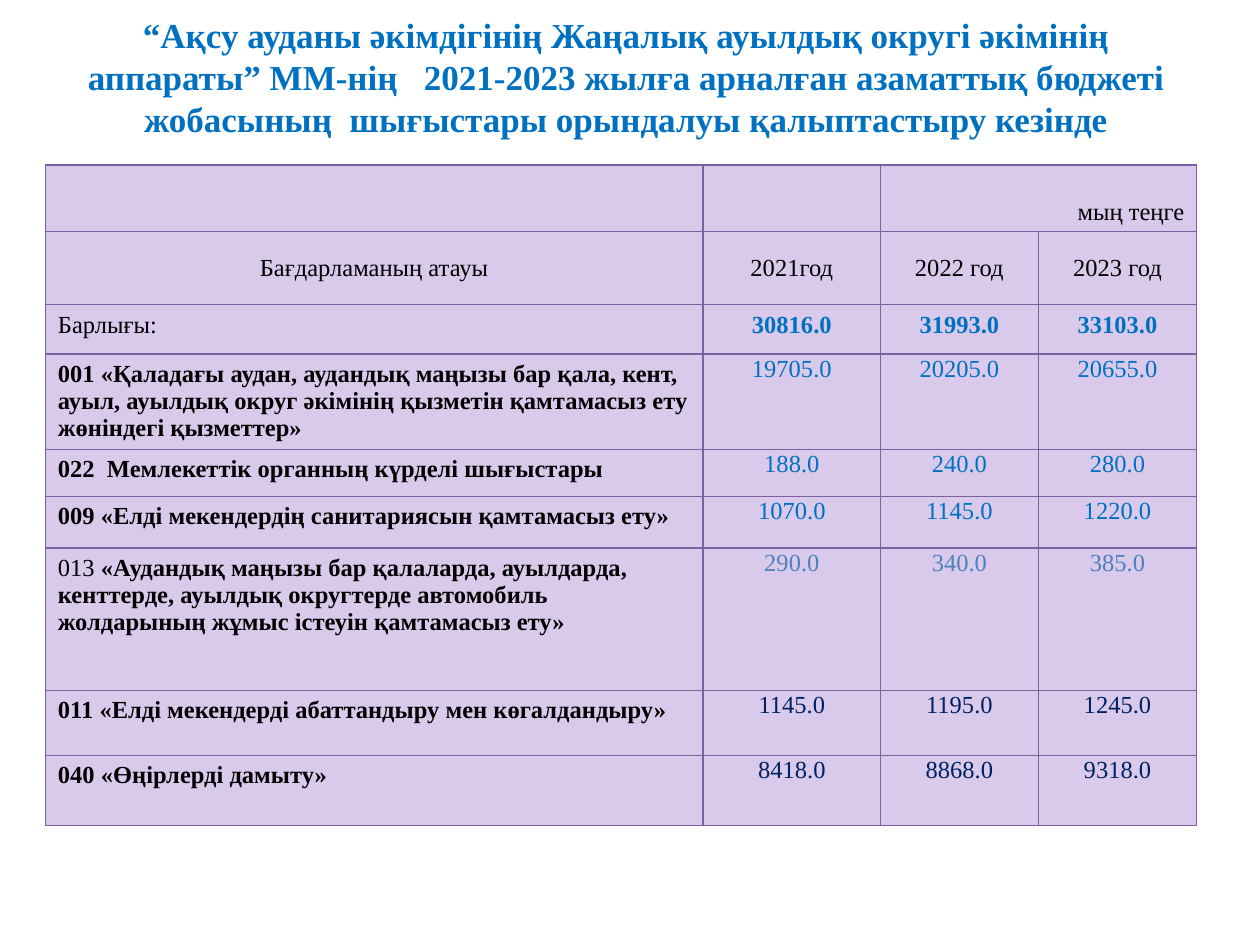
"""Build the civil budget expenditure slide with its programme table."""
from lxml.etree import SubElement
from pptx import Presentation
from pptx.dml.color import RGBColor
from pptx.enum.text import MSO_ANCHOR, PP_ALIGN
from pptx.oxml.ns import qn
from pptx.util import Inches, Pt

COLORS = {"blue": "0070C0", "steel": "4F81BD", "navy": "002060",
          "black": "000000", "lilac": "D9CAEC", "border": "7D60A0"}
FONT = "Times New Roman"
COLUMNS = [5.22, 1.41, 1.25, 1.26]
ROWS = [0.53, 0.58, 0.39, 0.76, 0.37, 0.41, 1.13, 0.52, 0.55]
TITLE = ("“Ақсу ауданы әкімдігінің Жаңалық ауылдық округі әкімінің аппараты” "
         "ММ-нің   2021-2023 жылға арналған азаматтық бюджеті жобасының  "
         "шығыстары орындалуы қалыптастыру кезінде")
HEADINGS = ["Бағдарламаның атауы", "2021год", "2022 год", "2023 год"]
PROGRAMMES = [
    ("Барлығы:", "", "blue", ["30816.0", "31993.0", "33103.0"]),
    ("", "001 «Қаладағы аудан, аудандық маңызы бар қала, кент, ауыл, ауылдық округ "
     "әкімінің қызметін қамтамасыз ету жөніндегі қызметтер»",
     "blue", ["19705.0", "20205.0", "20655.0"]),
    ("", "022  Мемлекеттік органның күрделі шығыстары",
     "blue", ["188.0", "240.0", "280.0"]),
    ("", "009 «Елді мекендердің санитариясын қамтамасыз ету»",
     "blue", ["1070.0", "1145.0", "1220.0"]),
    ("013", " «Аудандық маңызы бар қалаларда, ауылдарда, кенттерде, ауылдық округтерде "
     "автомобиль жолдарының жұмыс істеуін қамтамасыз ету»",
     "steel", ["290.0", "340.0", "385.0"]),
    ("", "011 «Елді мекендерді абаттандыру мен көгалдандыру»",
     "navy", ["1145.0", "1195.0", "1245.0"]),
    ("", "040 «Өңірлерді дамыту»", "navy", ["8418.0", "8868.0", "9318.0"]),
]


def write(paragraph, spans, size, color, align):
    for text, bold in spans:
        if text:
            span = paragraph.add_run()
            span.text = text
            span.font.bold = bold
    paragraph.alignment = align
    paragraph.font.name = FONT
    paragraph.font.size = Pt(size)
    paragraph.font.color.rgb = RGBColor.from_string(COLORS[color])


def outline(cell):
    properties = cell._tc.get_or_add_tcPr()
    for position, side in enumerate(("lnL", "lnR", "lnT", "lnB")):
        line = SubElement(properties, qn(f"a:{side}"), w=str(Pt(0.75)))
        fill = SubElement(line, qn("a:solidFill"))
        SubElement(fill, qn("a:srgbClr"), val=COLORS["border"])
        properties.insert(position, line)


deck = Presentation()
deck.slide_width, deck.slide_height = Inches(10), Inches(7.5)
page = deck.slides.add_slide(deck.slide_layouts[6])

table = page.shapes.add_table(
    len(ROWS), len(COLUMNS), Inches(0.36), Inches(1.31),
    Inches(sum(COLUMNS)), Inches(sum(ROWS))).table
table.first_row = table.horz_banding = False
for column, width in zip(table.columns, COLUMNS):
    column.width = Inches(width)
for row, height in zip(table.rows, ROWS):
    row.height = Inches(height)
for cell in table.iter_cells():
    cell.fill.solid()
    cell.fill.fore_color.rgb = RGBColor.from_string(COLORS["lilac"])
    outline(cell)

unit = table.cell(0, 2)
unit.merge(table.cell(0, 3))
unit.vertical_anchor = MSO_ANCHOR.BOTTOM
write(unit.text_frame.paragraphs[0], [("мың теңге", False)], 14, "black", PP_ALIGN.RIGHT)

for index, heading in enumerate(HEADINGS):
    cell = table.cell(1, index)
    cell.vertical_anchor = MSO_ANCHOR.MIDDLE
    write(cell.text_frame.paragraphs[0], [(heading, False)], 14, "black", PP_ALIGN.CENTER)

for row, (plain, strong, color, amounts) in enumerate(PROGRAMMES, start=2):
    is_total = row == 2
    name = table.cell(row, 0).text_frame.paragraphs[0]
    write(name, [(plain, False), (strong, True)], 14, "black", PP_ALIGN.LEFT)
    for column, amount in enumerate(amounts, start=1):
        cell = table.cell(row, column)
        if not is_total:
            cell.margin_left = cell.margin_right = cell.margin_top = Inches(0.01)
            cell.margin_bottom = 0
        write(cell.text_frame.paragraphs[0], [(amount, is_total)], 14, color, PP_ALIGN.CENTER)

title = page.shapes.add_textbox(Inches(0.44), Inches(0.06), Inches(9.06), Inches(1.1))
title.text_frame.word_wrap = True
title.text_frame.vertical_anchor = MSO_ANCHOR.BOTTOM
write(title.text_frame.paragraphs[0], [(TITLE, True)], 20, "blue", PP_ALIGN.CENTER)

deck.save("out.pptx")
